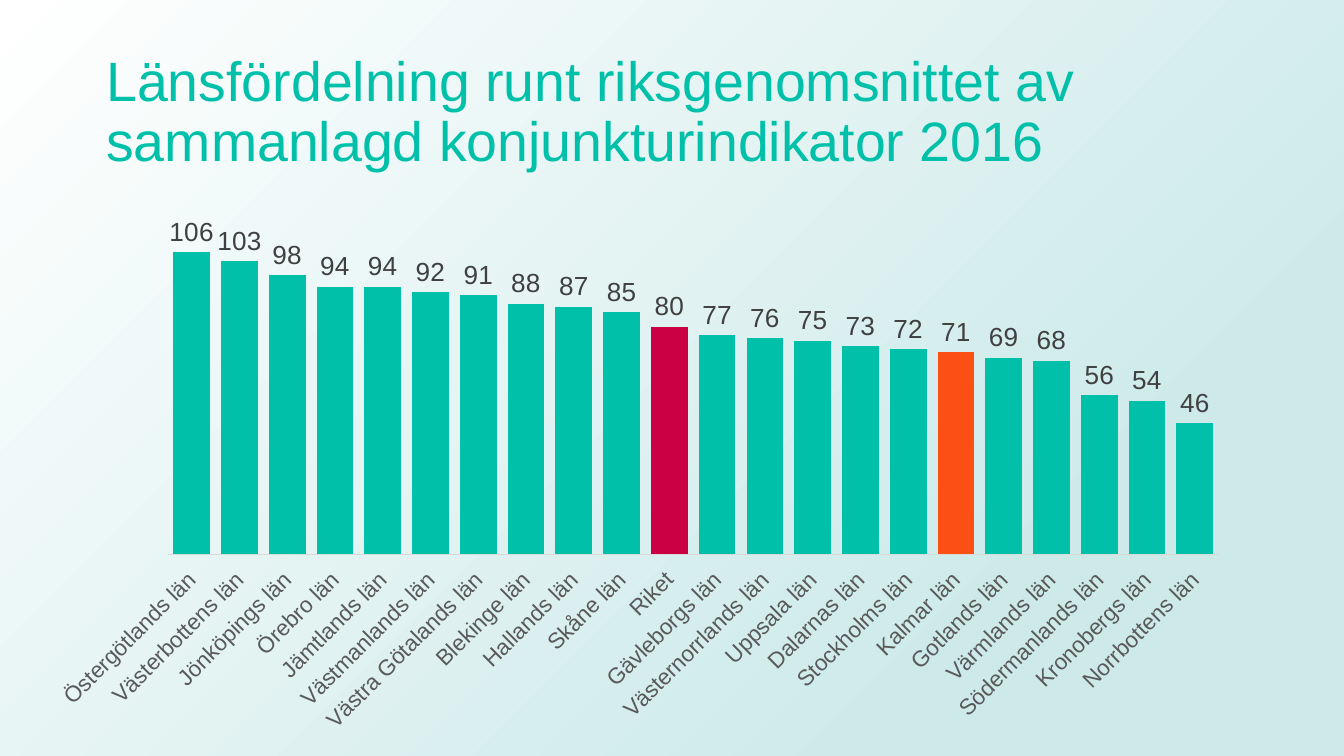
from lxml import etree
from pptx import Presentation
from pptx.chart.data import CategoryChartData
from pptx.dml.color import RGBColor
from pptx.enum.chart import XL_CHART_TYPE, XL_LABEL_POSITION, XL_TICK_LABEL_POSITION, XL_TICK_MARK
from pptx.enum.shapes import MSO_SHAPE
from pptx.enum.text import MSO_ANCHOR
from pptx.oxml import parse_xml
from pptx.oxml.ns import nsdecls, qn
from pptx.util import Emu, Pt

COLUMN = XL_CHART_TYPE.COLUMN_CLUSTERED
OUTSIDE_END = XL_LABEL_POSITION.OUTSIDE_END
LOW = XL_TICK_LABEL_POSITION.LOW
NO_TICK = XL_TICK_MARK.NONE
RECTANGLE = MSO_SHAPE.RECTANGLE
MIDDLE = MSO_ANCHOR.MIDDLE

TITLE = "Länsfördelning runt riksgenomsnittet av sammanlagd konjunkturindikator 2016"
COUNTIES = [
    ("Östergötlands län", 106), ("Västerbottens län", 103), ("Jönköpings län", 98),
    ("Örebro län", 94), ("Jämtlands län", 94), ("Västmanlands län", 92),
    ("Västra Götalands län", 91), ("Blekinge län", 88), ("Hallands län", 87),
    ("Skåne län", 85), ("Riket", 80), ("Gävleborgs län", 77),
    ("Västernorrlands län", 76), ("Uppsala län", 75), ("Dalarnas län", 73),
    ("Stockholms län", 72), ("Kalmar län", 71), ("Gotlands län", 69),
    ("Värmlands län", 68), ("Södermanlands län", 56), ("Kronobergs län", 54),
    ("Norrbottens län", 46),
]
HIGHLIGHTS = {"Riket": "CB0044", "Kalmar län": "FB4F14"}
TEAL = "00C0A9"
BACKGROUND_STOPS = [("CDEAE9", 0.23), ("FFFFFF", 1)]

SLIDE_SIZE = (1344, 756)
TITLE_BOX = (93, 40, 1158, 147)
CHART_BOX = (35, 202, 1208, 534)
PLOT_AREA = {"x": 0.11, "y": 0.02, "w": 0.87, "h": 0.64}
EMU_PER_PX = 914400 / 134.4


def px(*lengths):
    return [Emu(round(length * EMU_PER_PX)) for length in lengths]


def color(value):
    return RGBColor.from_string(value)


def style_font(font, size, value):
    font.name = "Arial"
    font.size = Pt(size)
    font.color.rgb = color(value)


def add_background(slide):
    shape = slide.shapes.add_shape(RECTANGLE, *px(0, 0, *SLIDE_SIZE))
    shape.shadow.inherit = False
    shape.line.fill.background()
    shape.fill.gradient()
    for stop, (value, position) in zip(shape.fill.gradient_stops, BACKGROUND_STOPS):
        stop.color.rgb = color(value)
        stop.position = position
    gradient = shape._element.spPr.find(qn("a:gradFill"))
    gradient.remove(gradient.find(qn("a:lin")))
    circle = etree.SubElement(gradient, qn("a:path"), path="circle")
    etree.SubElement(circle, qn("a:fillToRect"), l="100000", t="100000")


def add_title(slide):
    frame = slide.shapes.add_textbox(*px(*TITLE_BOX)).text_frame
    frame.word_wrap = True
    frame.vertical_anchor = MIDDLE
    paragraph = frame.paragraphs[0]
    paragraph.text = TITLE
    paragraph.line_spacing = 0.9
    style_font(paragraph.font, 29.7, TEAL)


def place_plot_area(chart):
    plot_area = chart._chartSpace.chart.plotArea
    previous = plot_area.find(qn("c:layout"))
    if previous is not None:
        plot_area.remove(previous)
    modes = '<c:xMode val="edge"/><c:yMode val="edge"/>'
    sizes = "".join(f'<c:{key} val="{value}"/>' for key, value in PLOT_AREA.items())
    plot_area.insert(0, parse_xml(
        f'<c:layout {nsdecls("c")}><c:manualLayout><c:layoutTarget val="inner"/>'
        f'{modes}{sizes}</c:manualLayout></c:layout>'))


def add_county_chart(slide):
    data = CategoryChartData(number_format="0")
    data.categories = [county for county, _ in COUNTIES]
    data.add_series("Series 1", [value for _, value in COUNTIES])
    chart = slide.shapes.add_chart(COLUMN, *px(*CHART_BOX), data).chart
    chart.has_legend = False
    chart.has_title = False
    chart.font.name = "Calibri"
    chart.font.size = Pt(10)
    place_plot_area(chart)

    value_axis = chart.value_axis
    value_axis.minimum_scale = 0
    value_axis.maximum_scale = 120
    value_axis.has_major_gridlines = False
    value_axis.visible = False

    category_axis = chart.category_axis
    category_axis.major_tick_mark = NO_TICK
    category_axis.minor_tick_mark = NO_TICK
    category_axis.tick_label_position = LOW
    category_axis.format.line.color.rgb = color("D9D9D9")
    category_axis.format.line.width = Pt(0.75)
    style_font(category_axis.tick_labels.font, 12, "595959")
    category_axis._element.txPr.find(qn("a:bodyPr")).set("rot", "-2700000")

    plot = chart.plots[0]
    plot.gap_width = 30
    plot.vary_by_categories = False
    series = plot.series[0]
    series.invert_if_negative = False
    series.format.fill.solid()
    series.format.fill.fore_color.rgb = color(TEAL)
    for index, (county, _) in enumerate(COUNTIES):
        if county in HIGHLIGHTS:
            fill = series.points[index].format.fill
            fill.solid()
            fill.fore_color.rgb = color(HIGHLIGHTS[county])

    labels = series.data_labels
    labels.show_value = True
    labels.number_format = "0"
    labels.number_format_is_linked = False
    labels.position = OUTSIDE_END
    style_font(labels.font, 14, "404040")


def main():
    presentation = Presentation()
    presentation.slide_width, presentation.slide_height = px(*SLIDE_SIZE)
    slide = presentation.slides.add_slide(presentation.slide_layouts[6])
    add_background(slide)
    add_title(slide)
    add_county_chart(slide)
    presentation.save("out.pptx")


if __name__ == "__main__":
    main()
